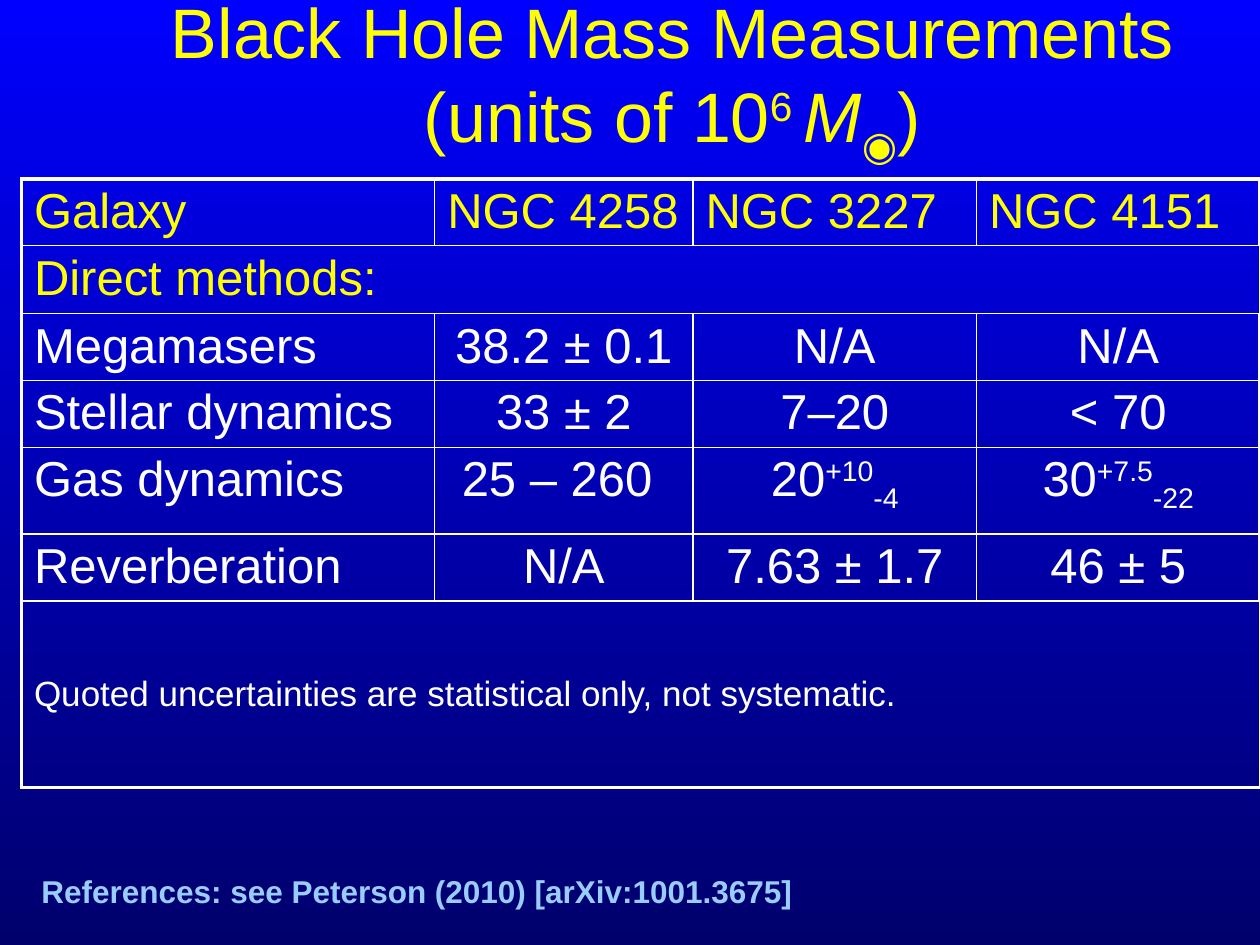
from lxml import etree
from pptx import Presentation
from pptx.dml.color import RGBColor
from pptx.enum.text import MSO_ANCHOR, MSO_AUTO_SIZE, PP_ALIGN
from pptx.oxml.ns import qn
from pptx.util import Inches, Pt

LEFT, CENTER = PP_ALIGN.LEFT, PP_ALIGN.CENTER
TOP, MIDDLE = MSO_ANCHOR.TOP, MSO_ANCHOR.MIDDLE
NO_FIT = MSO_AUTO_SIZE.NONE
YELLOW, WHITE, PALE_BLUE = "FFFF00", "FFFFFF", "99CCFF"
SUPER, SUB = {"baseline": 30}, {"baseline": -25}


def write(para, spans, color, size, align=LEFT, bold=False):
    """Fill a paragraph with (text, format) spans; a plain string is one span."""
    para.alignment = align
    for text, extra in [(spans, {})] if isinstance(spans, str) else spans:
        span = para.add_run()
        span.text = text
        style = {"name": "Arial", "size": Pt(size), "bold": bold,
                 "italic": extra.get("italic", False)}
        for key, value in style.items():
            setattr(span.font, key, value)
        span.font.color.rgb = RGBColor.from_string(color)
        if "baseline" in extra:
            span.font._element.set("baseline", str(extra["baseline"] * 1000))


def border(cell, side, points):
    """Draw one white cell border; side is L, R, T or B."""
    line = etree.SubElement(cell._tc.get_or_add_tcPr(), qn("a:ln" + side), w=str(Pt(points)))
    fill = etree.SubElement(line, qn("a:solidFill"))
    etree.SubElement(fill, qn("a:srgbClr"), val=WHITE)


deck = Presentation()
deck.slide_width, deck.slide_height = Inches(10), Inches(7.5)
page = deck.slides.add_slide(deck.slide_layouts[5])

# Background
backdrop = page.background.fill
backdrop.gradient()
backdrop.gradient_angle = 270
for stop, color in zip(backdrop.gradient_stops, ("0000FF", "00006C")):
    stop.color.rgb = RGBColor.from_string(color)
backdrop.gradient_stops[0].position, backdrop.gradient_stops[1].position = 0, 1

# Title
title = page.shapes.title
title.left, title.top = Inches(0.67), 0
title.width, title.height = deck.slide_width - title.left, Inches(1.25)
frame = title.text_frame
frame.word_wrap, frame.auto_size, frame.vertical_anchor = True, NO_FIT, MIDDLE
write(frame.paragraphs[0],
      [("Black Hole Mass Measurements (units of 10", {}), ("6 ", SUPER),
       ("M", {"italic": True}), ("◉", SUB), (")", {})],
      YELLOW, 40, CENTER)

# Table: a row with a single entry spans all columns
rows = [
    ["Galaxy", "NGC 4258", "NGC 3227", "NGC 4151"],
    ["Direct methods:"],
    ["Megamasers", "38.2 ± 0.1", "N/A", "N/A"],
    ["Stellar dynamics", "33 ± 2", "7–20", "< 70"],
    ["Gas dynamics", "25 – 260 ",
     [("20", {}), ("+10", SUPER), ("-4", SUB)],
     [("30", {}), ("+7.5", SUPER), ("-22", SUB)]],
    ["Reverberation", "N/A", "7.63 ± 1.7", "46 ± 5"],
    ["Quoted uncertainties are statistical only, not systematic."],
]
widths = [3.28, 2.05, 2.25, 2.25]
heights = [0.53, 0.54, 0.53, 0.53, 0.69, 0.53, 1.48]
last_row, last_column = len(rows) - 1, len(widths) - 1
table = page.shapes.add_table(len(rows), len(widths), Inches(0.17), Inches(1.42),
                              Inches(sum(widths)), Inches(sum(heights))).table
table.first_row = table.horz_banding = False
for column, width in zip(table.columns, widths):
    column.width = Inches(width)

for r, (entries, height) in enumerate(zip(rows, heights)):
    table.rows[r].height = Inches(height)
    spanning = len(entries) == 1
    if spanning:
        table.cell(r, 0).merge(table.cell(r, last_column))
    for c in range(len(widths)):
        cell = table.cell(r, c)
        outer = {"L": c == 0, "R": c == last_column, "T": r == 0, "B": r == last_row}
        for side, is_outer in outer.items():
            if is_outer or side in "TB" or not spanning:
                border(cell, side, 2.25 if is_outer else 1)
        cell.fill.background()
        cell.margin_top = cell.margin_bottom = Inches(0.04)
        cell.vertical_anchor = MIDDLE if r == last_row else TOP
        if c < len(entries):
            write(cell.text_frame.paragraphs[0], entries[c],
                  YELLOW if r < 2 else WHITE,
                  20 if r == last_row else 28,
                  CENTER if r > 1 and c > 0 else LEFT)

# Reference line
box = page.shapes.add_textbox(Inches(0.23), Inches(6.87), Inches(6.16), Inches(0.4))
box.text_frame.word_wrap = False
write(box.text_frame.paragraphs[0], "References: see Peterson (2010) [arXiv:1001.3675]",
      PALE_BLUE, 18, bold=True)

deck.save("out.pptx")
